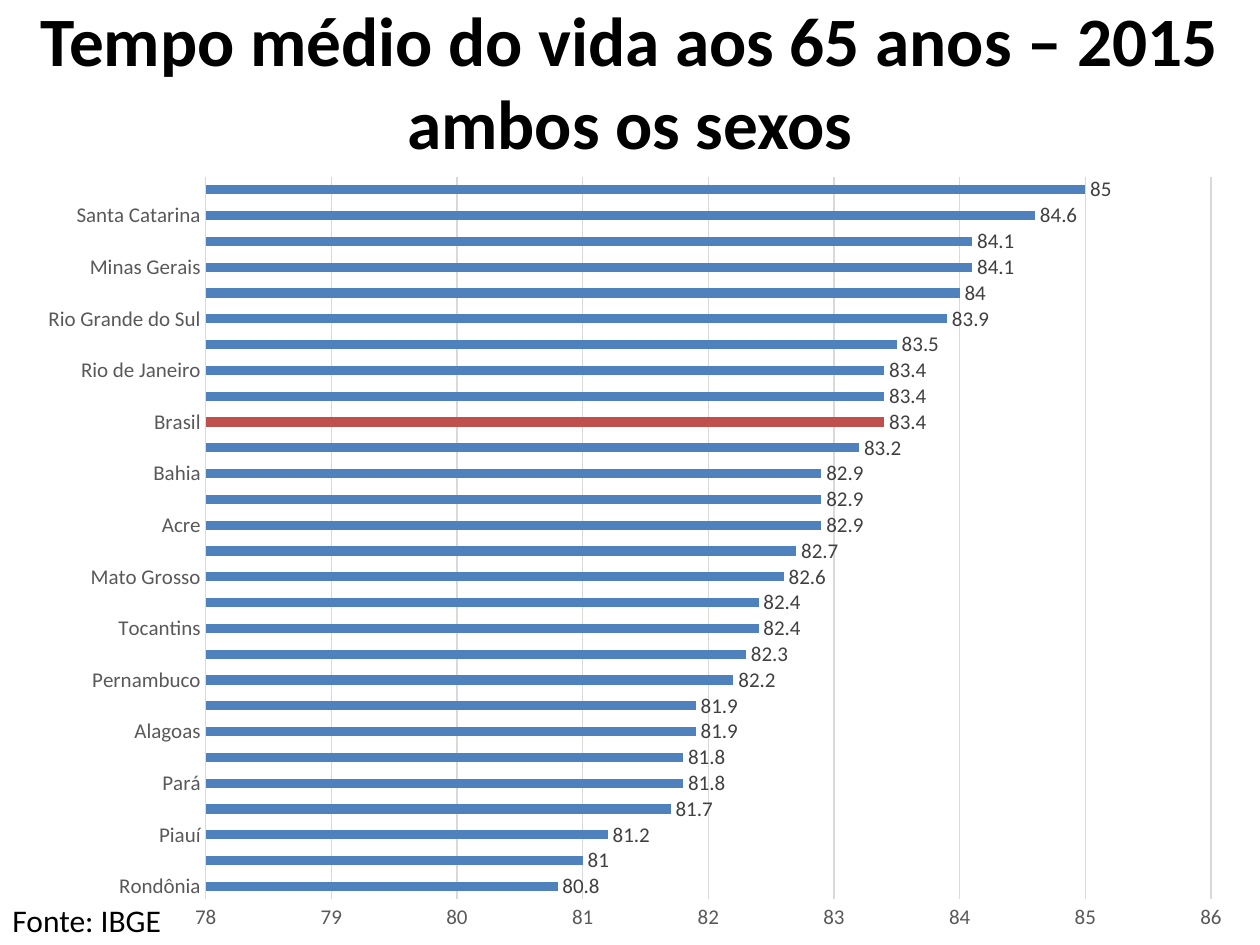
from pptx import Presentation
from pptx.chart.data import CategoryChartData
from pptx.dml.color import RGBColor
from pptx.enum.chart import XL_CHART_TYPE as ChartType, XL_LABEL_POSITION as LabelPosition, XL_TICK_MARK as TickMark
from pptx.enum.text import MSO_ANCHOR as Anchor, PP_ALIGN as Align
from pptx.util import Inches, Pt

FONT = "Calibri"
BLACK = RGBColor(0x00, 0x00, 0x00)
AXIS_GRAY = RGBColor(0x59, 0x59, 0x59)
LABEL_GRAY = RGBColor(0x40, 0x40, 0x40)
GRID_GRAY = RGBColor(0xD9, 0xD9, 0xD9)
BAR_BLUE = RGBColor(0x4F, 0x81, 0xBD)
BRAZIL_RED = RGBColor(0xC0, 0x50, 0x4D)

AGES = {
    "Rondônia": 80.8, "Roraima": 81, "Piauí": 81.2, "Amazonas": 81.7,
    "Pará": 81.8, "Maranhão": 81.8, "Alagoas": 81.9, "Sergipe": 81.9,
    "Pernambuco": 82.2, "Paraíba": 82.3, "Tocantins": 82.4, "Goiás": 82.4,
    "Mato Grosso": 82.6, "Ceará": 82.7, "Acre": 82.9, "Amapá": 82.9,
    "Bahia": 82.9, "Mato Grosso do Sul": 83.2, "Brasil": 83.4,
    "Rio Grande do Norte": 83.4, "Rio de Janeiro": 83.4, "Paraná": 83.5,
    "Rio Grande do Sul": 83.9, "D. Federal": 84, "Minas Gerais": 84.1,
    "São Paulo": 84.1, "Santa Catarina": 84.6, "Espírito Santo": 85,
}


def style_font(font, size, color, bold=False):
    font.name = FONT
    font.size = Pt(size)
    font.bold = bold
    font.color.rgb = color


def style_line(line, color):
    line.color.rgb = color
    line.width = Pt(0.75)


def add_text(page, box, text, size, bold=False, align=Align.LEFT, anchor=Anchor.TOP):
    frame = page.shapes.add_textbox(*box).text_frame
    frame.word_wrap = True
    frame.vertical_anchor = anchor
    para = frame.paragraphs[0]
    para.text = text
    para.alignment = align
    style_font(para.font, size, BLACK, bold)


def add_age_chart(page, box):
    data = CategoryChartData()
    data.categories = list(AGES)
    data.add_series("Series 1", list(AGES.values()))
    chart = page.shapes.add_chart(ChartType.BAR_CLUSTERED, *box, data).chart
    chart.has_legend = False
    chart.has_title = False
    style_font(chart.font, 12, BLACK)

    states, ages = chart.category_axis, chart.value_axis
    for axis in (states, ages):
        axis.major_tick_mark = TickMark.NONE
        axis.minor_tick_mark = TickMark.NONE
        style_font(axis.tick_labels.font, 12, AXIS_GRAY)
    states.has_major_gridlines = False
    style_line(states.format.line, GRID_GRAY)
    ages.minimum_scale, ages.maximum_scale, ages.major_unit = 78, 86, 1
    ages.format.line.fill.background()
    ages.has_major_gridlines = True
    style_line(ages.major_gridlines.format.line, GRID_GRAY)

    plot = chart.plots[0]
    plot.gap_width = 182
    plot.vary_by_categories = False
    series = plot.series[0]
    series.format.fill.solid()
    series.format.fill.fore_color.rgb = BAR_BLUE
    brazil = series.points[list(AGES).index("Brasil")].format.fill
    brazil.solid()
    brazil.fore_color.rgb = BRAZIL_RED

    labels = series.data_labels
    labels.show_value = True
    labels.position = LabelPosition.OUTSIDE_END
    labels.number_format = "General"
    labels.number_format_is_linked = False
    style_font(labels.font, 12, LABEL_GRAY)


def main():
    deck = Presentation()
    deck.slide_width, deck.slide_height = Inches(10), Inches(7.5)
    page = deck.slides.add_slide(deck.slide_layouts[6])
    title_box = Inches(0), Inches(0), Inches(10), Inches(1.28)
    chart_box = Inches(0.19), Inches(1.28), Inches(9.7), Inches(6.22)
    source_box = Inches(0), Inches(7.1), Inches(1.69), Inches(0.4)
    add_text(page, title_box, "Tempo médio do vida aos 65 anos – 2015\vambos os sexos",
             39.6, True, Align.CENTER, Anchor.MIDDLE)
    add_age_chart(page, chart_box)
    add_text(page, source_box, "Fonte: IBGE", 18)
    deck.save("out.pptx")


if __name__ == "__main__":
    main()
